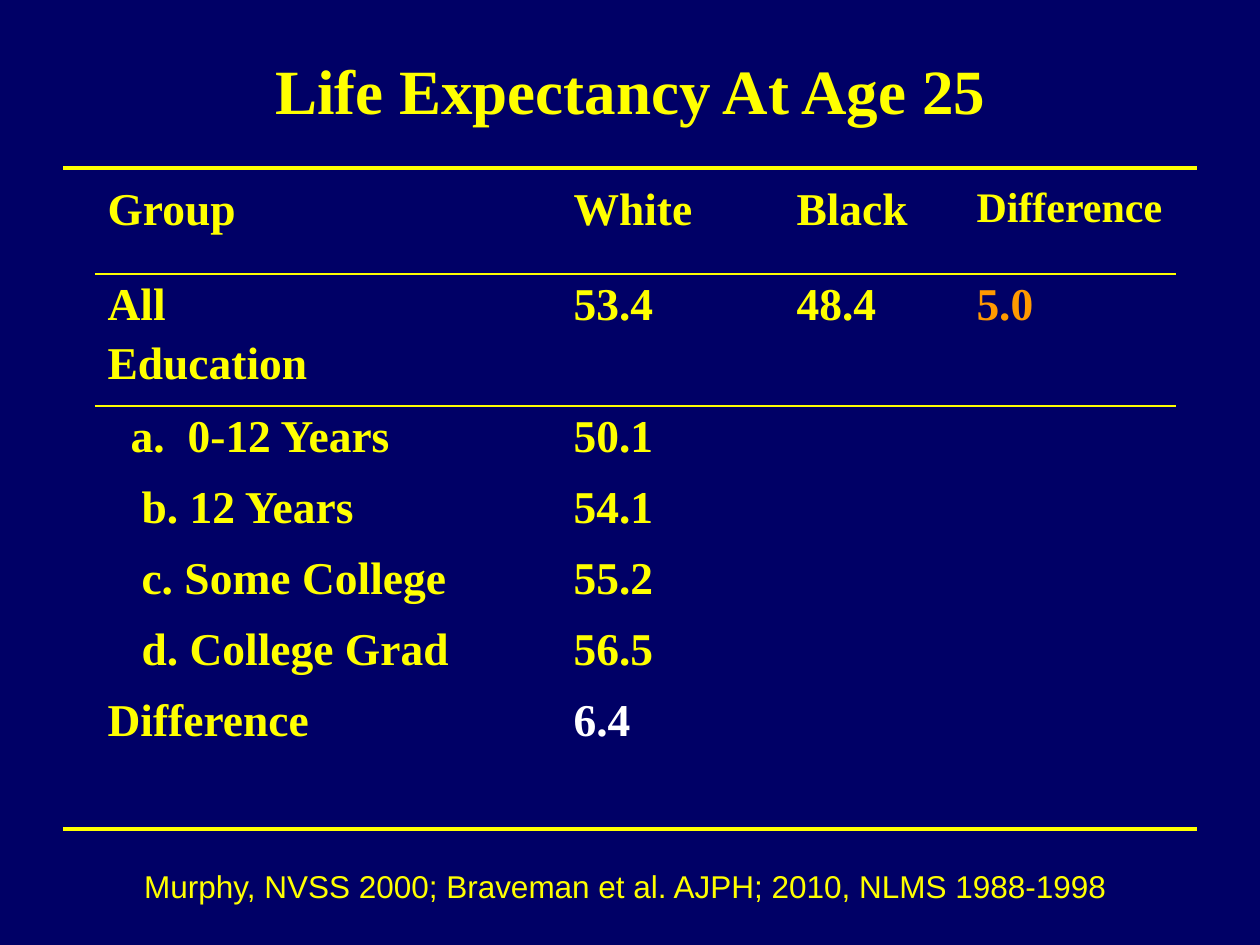
from lxml.etree import SubElement
from pptx import Presentation
from pptx.dml.color import RGBColor
from pptx.enum.shapes import MSO_CONNECTOR
from pptx.enum.text import MSO_ANCHOR, MSO_AUTO_SIZE, PP_ALIGN
from pptx.oxml import parse_xml
from pptx.oxml.ns import nsdecls, qn
from pptx.util import Emu, Pt

HUES = {"navy": "000066", "yellow": "FFFF00", "orange": "FF9900", "white": "FFFFFF"}
SERIF = {"name": "Times New Roman", "bold": True, "size": Pt(26)}
PLAIN = "{2D5ABB26-0587-4C30-8999-92F81FD0307C}"  # table style without grid

COLS = [466, 223, 180, 212]
ROWS = [95, 132] + [71] * 5
CELLS = [
    ["Group", "White", "Black", "Difference"],
    ["All\nEducation", "53.4", "48.4", "5.0"],
    ["a.\t0-12 Years", "50.1"],
    ["b. 12 Years", "54.1"],
    ["c. Some College", "55.2"],
    ["d. College Grad", "56.5"],
    ["Difference", "6.4"],
]
LOOKS = {
    (0, 3): {"size": Pt(24)},
    (1, 3): {"hue": "orange"},
    (6, 1): {"hue": "white"},
}
# row: left margin and first-line indent of its label
INSETS = {2: (80, -57), 3: (34, 0), 4: (34, 0), 5: (34, 0)}


def px(num):
    return Emu(num * 914400 // 126)


def color(hue):
    return RGBColor.from_string(HUES[hue])


class Deck:
    """Holds the text style and the current slide."""

    def __init__(self):
        self.file = Presentation()
        self.file.slide_width, self.file.slide_height = px(1260), px(945)
        self.slide = self.file.slides.add_slide(self.file.slide_layouts[5])
        fill = self.slide.background.fill
        fill.solid()
        fill.fore_color.rgb = color("navy")

    def style(self, para, hue="yellow", **form):
        for key, val in form.items():
            setattr(para.font, key, val)
        para.font.color.rgb = color(hue)

    def title(self, text, box):
        shape = self.slide.shapes.title
        for key, val in zip(("left", "top", "width", "height"), box):
            setattr(shape, key, px(val))
        frame = shape.text_frame
        frame.text = text
        frame.vertical_anchor = MSO_ANCHOR.MIDDLE
        para = frame.paragraphs[0]
        para.alignment = PP_ALIGN.CENTER
        self.style(para, **{**SERIF, "size": Pt(36)})

    def source(self, text, box):
        frame = self.slide.shapes.add_textbox(*map(px, box)).text_frame
        frame.word_wrap = True
        frame.auto_size = MSO_AUTO_SIZE.SHAPE_TO_FIT_TEXT
        frame.text = text
        para = frame.paragraphs[0]
        para.alignment = PP_ALIGN.CENTER
        self.style(para, name="Arial", size=Pt(18))

    def rule(self, left, right, top):
        line = self.slide.shapes.add_connector(
            MSO_CONNECTOR.STRAIGHT, px(left), px(top), px(right), px(top))
        line.line.color.rgb = color("yellow")
        line.line.width = Pt(2.25)
        SubElement(line._element.spPr, qn("a:effectLst"))

    def border(self, cell, side):
        cell._tc.get_or_add_tcPr().insert(0, parse_xml(
            f'<a:{side} {nsdecls("a")} w="12700"><a:solidFill>'
            f'<a:srgbClr val="{HUES["yellow"]}"/></a:solidFill></a:{side}>'))

    def table(self, left, top):
        table = self.slide.shapes.add_table(
            len(ROWS), len(COLS), px(left), px(top),
            px(sum(COLS)), px(sum(ROWS))).table
        table.first_row = table.horz_banding = False
        table._tbl.tblPr.find(qn("a:tableStyleId")).text = PLAIN
        for col, wide in zip(table.columns, COLS):
            col.width = px(wide)
        for row, high in zip(table.rows, ROWS):
            row.height = px(high)
        for r, row in enumerate(table.rows):
            for c, cell in enumerate(row.cells):
                cell.fill.background()
                if r < 2:
                    self.border(cell, ("lnB", "lnT")[r])
                if c < len(CELLS[r]):
                    self.fill(cell, r, c)

    def fill(self, cell, r, c):
        cell.text = CELLS[r][c]
        for num, para in enumerate(cell.text_frame.paragraphs):
            if num:
                para.space_before = Pt(4.5)
            if c == 0 and r in INSETS:
                props = para._p.get_or_add_pPr()
                for key, val in zip(("marL", "indent"), INSETS[r]):
                    props.set(key, str(px(val)))
            self.style(para, **{**SERIF, **LOOKS.get((r, c), {})})


def main():
    deck = Deck()
    deck.title("Life Expectancy At Age 25", (95, 10, 1071, 158))
    deck.table(95, 179)
    for top in (168, 829):
        deck.rule(63, 1197, top)
    deck.source("Murphy, NVSS 2000; Braveman et al. AJPH; 2010, NLMS 1988-1998",
                (95, 861, 1061, 50))
    deck.file.save("out.pptx")


if __name__ == "__main__":
    main()
